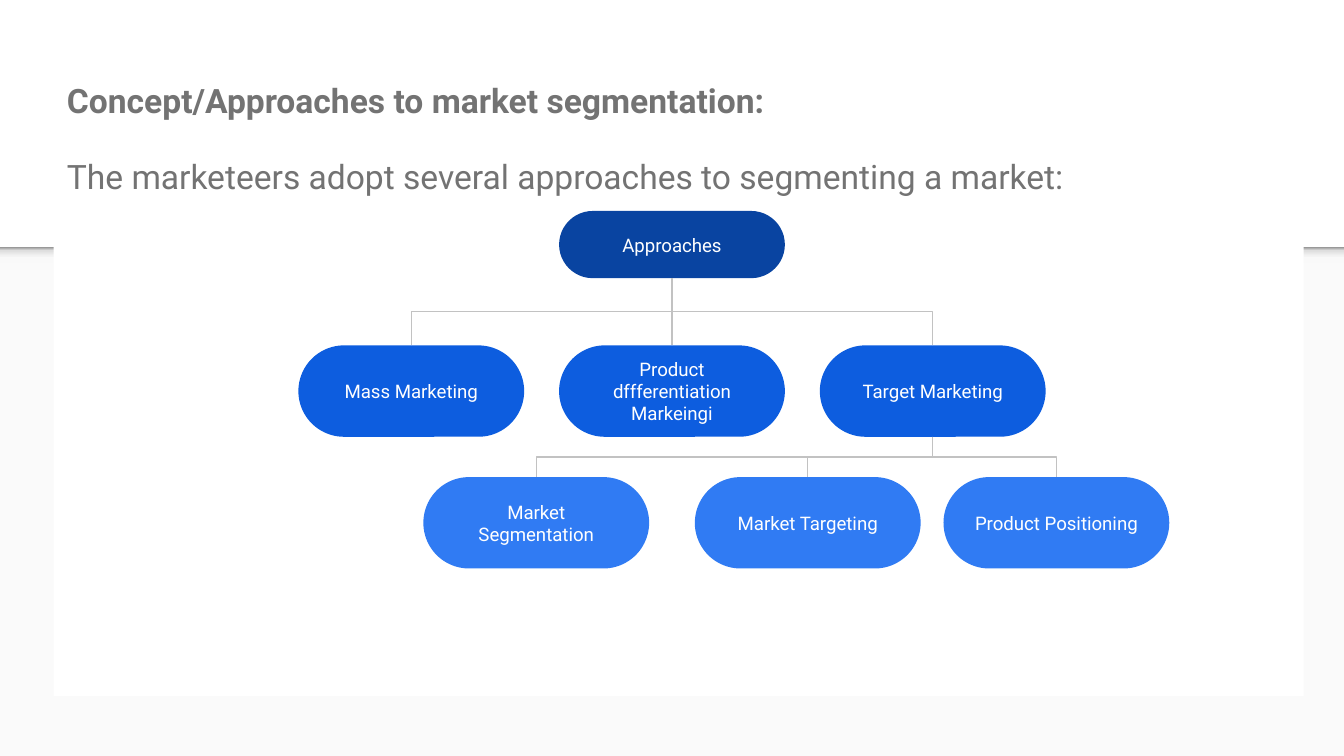
import pptx
import pptx.util
import pptx.dml.color
import pptx.enum.shapes
import pptx.enum.text
import pptx.oxml
import pptx.oxml.ns

Inches, Pt = pptx.util.Inches, pptx.util.Pt
Kind = pptx.enum.shapes.MSO_SHAPE

LINES = [
    ("Concept/Approaches to market segmentation:", True, 0),
    ("The marketeers adopt several approaches to segmenting a market:", False, 16),
]
# Tiers of the tree: top, height, fill, parent label, (label, centre x)
TIERS = [
    (1.57, 0.5, "top", None, [("Approaches", 5)]),
    (2.57, 0.68, "mid", "Approaches",
     [("Mass Marketing", 3.06), ("Product dffferentiation Markeingi", 5),
      ("Target Marketing", 6.94)]),
    (3.55, 0.68, "low", "Target Marketing",
     [("Market Segmentation", 3.99), ("Market Targeting", 6.01),
      ("Product Positioning", 7.86)]),
]
WIDTH = 1.68
PAGE = (10, 10 * 9 / 16)
FOLD = 1.84
THEME = {
    "font": "Roboto", "head": 18, "node": 10, "rule": 0.75,
    "page": "FAFAFA", "panel": "FFFFFF", "text": "737373", "label": "FFFFFF",
    "top": "0944A1", "mid": "0D5DDF", "low": "307BF3", "line": "C2C2C2",
    "shade": [(0, "F9F9F9"), (36, "F9F9F9"), (80, "DEDEDE"), (100, "999999")],
}


def color(name):
    return pptx.dml.color.RGBColor.from_string(THEME[name])


def assign(item, values):
    for key, value in values.items():
        setattr(item, key, value)


def add_box(slide, kind, place, fill=None):
    box = slide.shapes.add_shape(kind, *map(Inches, place))
    box.shadow.inherit = False
    box.line.fill.background()
    if fill:
        box.fill.solid()
        box.fill.fore_color.rgb = color(fill)
    return box


def set_frame(box, anchor):
    sides = ("left", "right", "top", "bottom")
    frame = box.text_frame
    assign(frame, {f"margin_{side}": Inches(0.1) for side in sides})
    assign(frame, {"word_wrap": True, "vertical_anchor": anchor})
    return frame


def add_text(para, text, size, tint, bold, form):
    run = para.add_run()
    run.text = text
    assign(run.font, {"name": THEME["font"], "size": Pt(THEME[size]), "bold": bold})
    run.font.color.rgb = color(tint)
    assign(para, form)


def add_shade(slide):
    band = add_box(slide, Kind.RECTANGLE, (0, FOLD, PAGE[0], 0.12))
    band.fill.gradient()
    band.fill.gradient_angle = 90
    stops = band._element.spPr.find(".//" + pptx.oxml.ns.qn("a:gsLst"))
    for stop in list(stops):
        stops.remove(stop)
    for place, tint in THEME["shade"]:
        stops.append(pptx.oxml.parse_xml(
            f'<a:gs {pptx.oxml.ns.nsdecls("a")} pos="{place * 1000}">'
            f'<a:srgbClr val="{tint}"/></a:gs>'))


def add_link(slide, start, end):
    """Join two points by an elbow that leaves downward: a turned side elbow."""
    (x1, y1), (x2, y2) = start, end
    wide, high = y2 - y1, abs(x2 - x1)
    left, top = (x1 + x2 - wide) / 2, (y1 + y2 - high) / 2
    ends = (left, left + wide)
    turn = 90
    if x2 > x1:
        ends, turn = ends[::-1], 270
    link = slide.shapes.add_connector(
        pptx.enum.shapes.MSO_CONNECTOR.ELBOW,
        *map(Inches, (ends[0], top, ends[1], top + high)))
    props = link._element.spPr
    props.find(pptx.oxml.ns.qn("a:xfrm")).set("rot", str(turn * 60000))
    link.line.color.rgb = color("line")
    link.line.width = Pt(THEME["rule"])
    props.append(pptx.oxml.parse_xml(
        f'<a:effectLst {pptx.oxml.ns.nsdecls("a")}/>'))


def add_node(slide, label, place, fill):
    node = add_box(slide, Kind.ROUNDED_RECTANGLE, place, fill)
    node.adjustments[0] = 0.5
    frame = set_frame(node, pptx.enum.text.MSO_ANCHOR.MIDDLE)
    add_text(frame.paragraphs[0], label, "node", "label", False,
             {"alignment": pptx.enum.text.PP_ALIGN.CENTER})


def add_tree(slide):
    feet = {}
    for top, high, fill, parent, nodes in TIERS:
        for label, mid in nodes:
            add_node(slide, label, (mid - WIDTH / 2, top, WIDTH, high), fill)
            feet[label] = (mid, top + high)
            if parent:
                add_link(slide, feet[parent], (mid, top))


def add_panel(slide):
    panel = add_box(slide, Kind.RECTANGLE, (0.4, 0.45, 9.3, 4.73), "panel")
    frame = set_frame(panel, pptx.enum.text.MSO_ANCHOR.TOP)
    for i, (text, bold, gap) in enumerate(LINES):
        para = frame.add_paragraph() if i else frame.paragraphs[0]
        add_text(para, text, "head", "text", bold,
                 {"alignment": pptx.enum.text.PP_ALIGN.LEFT,
                  "line_spacing": 1.15, "space_before": Pt(gap)})


def main():
    deck = pptx.Presentation()
    wide, high = PAGE
    assign(deck, {"slide_width": Inches(wide), "slide_height": Inches(high)})
    slide = deck.slides.add_slide(deck.slide_layouts[6])
    add_box(slide, Kind.RECTANGLE, (0, FOLD, wide, high - FOLD), "page")
    add_shade(slide)
    add_panel(slide)
    add_tree(slide)
    deck.save("out.pptx")


if __name__ == "__main__":
    main()
